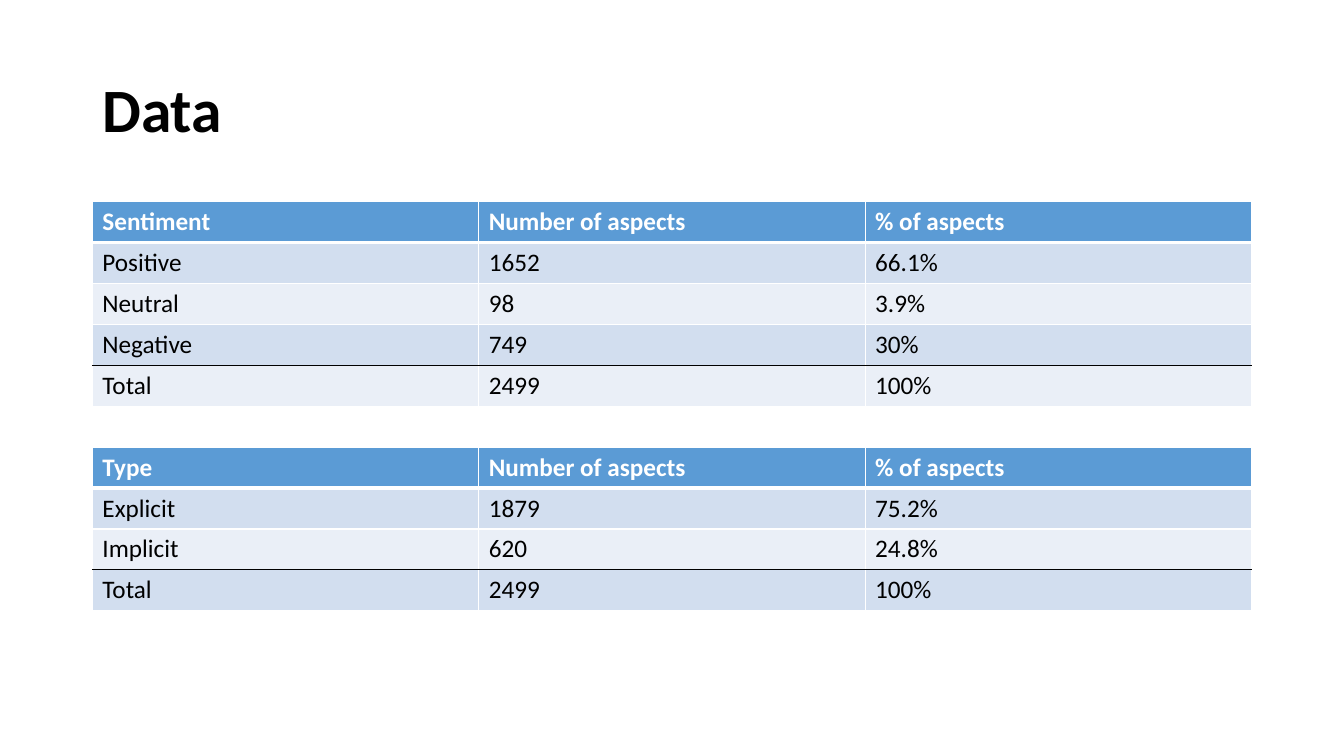
from lxml import etree
from pptx import Presentation, util as u
from pptx.dml.color import RGBColor
from pptx.enum import text
from pptx.oxml.ns import qn

PX = 9525
HUES = {"ink": "000000", "paper": "FFFFFF", "head": "5B9BD5",
        "dark": "D2DEEF", "light": "EAEFF7"}
ASPECTS = [
    [("Sentiment", "Number of aspects", "% of aspects"),
     ("Positive", "1652", "66.1%"),
     ("Neutral", "98", "3.9%"),
     ("Negative", "749", "30%"),
     ("Total", "2499", "100%")],
    [("Type", "Number of aspects", "% of aspects"),
     ("Explicit", "1879", "75.2%"),
     ("Implicit", "620", "24.8%"),
     ("Total", "2499", "100%")],
]


class Deck:
    font = "Calibri"

    def __init__(self, wide, high):
        self.prs = Presentation()
        self.prs.slide_width, self.prs.slide_height = wide * PX, high * PX
        self.slide = self.prs.slides.add_slide(self.prs.slide_layouts[6])

    def style(self, para, size, hue, bold):
        for run in para.runs:
            run.font.name, run.font.size = self.font, u.Pt(size)
            run.font.bold = bold
            run.font.color.rgb = RGBColor.from_string(HUES[hue])

    def title(self, words, *box):
        frame = self.slide.shapes.add_textbox(*(n * PX for n in box)).text_frame
        frame.word_wrap = True
        frame.vertical_anchor = text.MSO_ANCHOR.MIDDLE
        frame.text = words
        para = frame.paragraphs[0]
        para.line_spacing = 0.9
        self.style(para, 44, "ink", True)

    def edges(self, cell, top, base):
        props = cell._tc.get_or_add_tcPr()
        plain = ("paper", 1)
        sides = (("L", plain), ("R", plain), ("T", top), ("B", base))
        for spot, (side, (hue, width)) in enumerate(sides):
            line = etree.Element(qn("a:ln" + side), w=str(u.Pt(width)))
            fill = etree.SubElement(line, qn("a:solidFill"))
            etree.SubElement(fill, qn("a:srgbClr"), val=HUES[hue])
            props.insert(spot, line)

    def cell(self, cell, words, fill, ink, bold, top, base):
        cell.fill.solid()
        cell.fill.fore_color.rgb = RGBColor.from_string(HUES[fill])
        cell.text = words
        self.style(cell.text_frame.paragraphs[0], 18, ink, bold)
        self.edges(cell, top, base)

    def table(self, groups, left, top, wide, step):
        cols = len(groups[0][0])
        count = sum(map(len, groups)) + len(groups) - 1
        grid = self.slide.shapes.add_table(
            count, cols, left * PX, top * PX, wide * PX, count * step * PX).table
        grid.first_row = grid.horz_banding = False
        plain, thick, rule = ("paper", 1), ("paper", 3), ("ink", 1)
        start = 0
        for group in groups:
            if start:
                for cell in grid.rows[start - 1].cells:
                    self.cell(cell, "", "paper", "ink", False, plain, plain)
            last = len(group) - 1
            tops = {1: thick, last: rule}
            bases = {0: thick, last - 1: rule}
            for row, words in enumerate(group):
                head = row == 0
                fill = "head" if head else ("light", "dark")[row % 2]
                ink = "paper" if head else "ink"
                for col, word in enumerate(words):
                    self.cell(grid.cell(start + row, col), word, fill, ink, head,
                              tops.get(row, plain), bases.get(row, plain))
            start += len(group) + 1


def main():
    deck = Deck(1280, 720)
    deck.title("Data", 88, 38, 1104, 139)
    deck.table(ASPECTS, 88, 192, 1104, 39)
    deck.prs.save("out.pptx")


if __name__ == "__main__":
    main()
